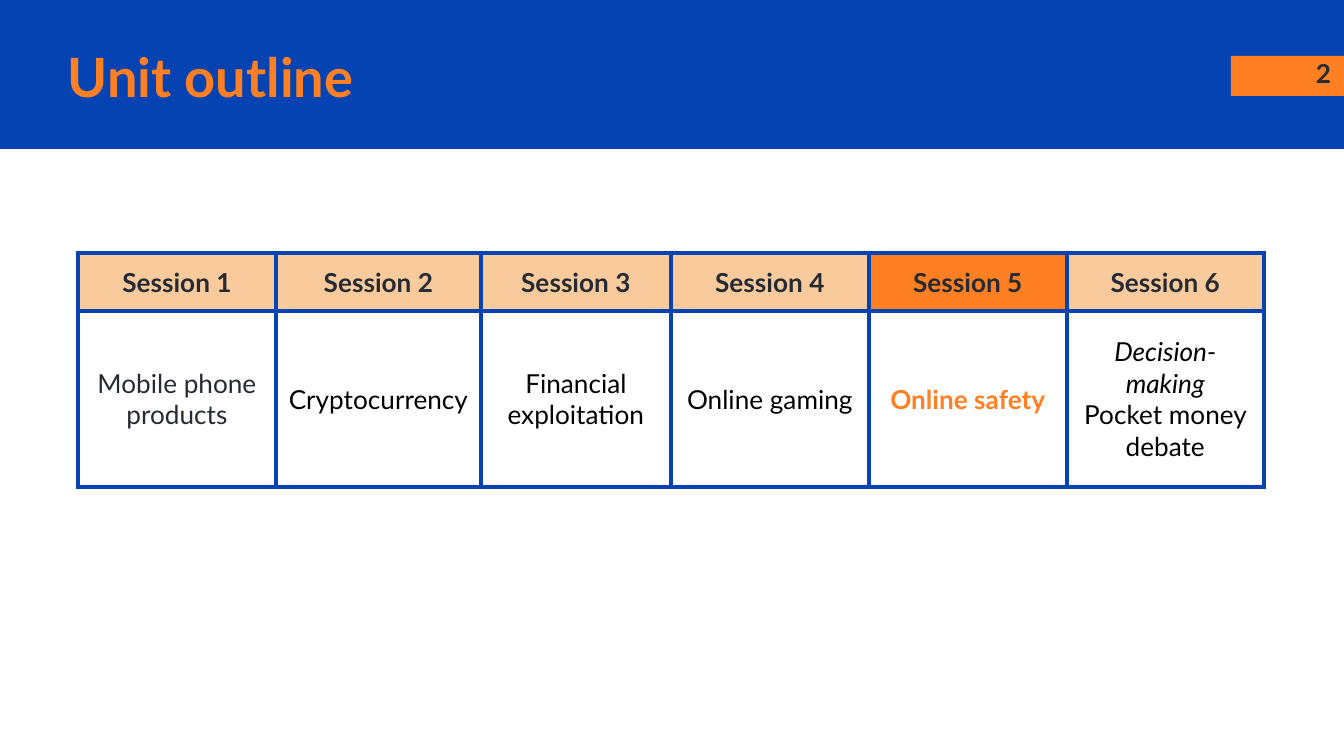
import dataclasses

import pptx
import pptx.dml.color
import pptx.enum.shapes
import pptx.enum.text
import pptx.oxml
import pptx.oxml.ns
import pptx.util

EMU_PER_PX = 914400 / 134.4
BLUE, ORANGE, PEACH = "0543B3", "FF8022", "F9CB9C"
DARK, BLACK = "262A33", "000000"
ALIGN = pptx.enum.text.PP_ALIGN
MIDDLE = pptx.enum.text.MSO_ANCHOR.MIDDLE
TOP = pptx.enum.text.MSO_ANCHOR.TOP
HEADER_INSET, BODY_INSET = 13, 9


@dataclasses.dataclass(frozen=True)
class Box:
    left: int
    top: int
    width: int
    height: int


@dataclasses.dataclass(frozen=True)
class Line:
    text: str
    color: str = BLACK
    bold: bool = False
    italic: bool = False
    size: int = 14


@dataclasses.dataclass(frozen=True)
class Session:
    width: int
    lines: tuple[Line, ...]
    header_fill: str = PEACH


SESSIONS = (
    Session(198, (Line("Mobile phone products", DARK),)),
    Session(205, (Line("Cryptocurrency"),)),
    Session(190, (Line("Financial exploitation"),)),
    Session(198, (Line("Online gaming"),)),
    Session(198, (Line("Online safety", ORANGE, bold=True),), ORANGE),
    Session(197, (Line("Decision-", italic=True), Line("making", italic=True),
                  Line("Pocket money debate"))),
)
ROW_HEIGHTS = (58, 176)


def px(length: int) -> int:
    return round(length * EMU_PER_PX)


def rgb(color: str) -> pptx.dml.color.RGBColor:
    return pptx.dml.color.RGBColor.from_string(color)


def place(box: Box) -> tuple[int, ...]:
    return tuple(px(length) for length in dataclasses.astuple(box))


def set_values(target, values: dict) -> None:
    for name, value in values.items():
        setattr(target, name, value)


def margins(inset: int) -> dict:
    return {f"margin_{side}": px(inset) for side in ("left", "right", "top", "bottom")}


def write_lines(text_frame, lines: tuple[Line, ...], alignment) -> None:
    for index, line in enumerate(lines):
        paragraph = text_frame.add_paragraph() if index else text_frame.paragraphs[0]
        paragraph.alignment = alignment
        run = paragraph.add_run()
        run.text = line.text
        set_values(run.font, {"name": "Lato", "size": pptx.util.Pt(line.size),
                              "bold": line.bold, "italic": line.italic})
        run.font.color.rgb = rgb(line.color)


def add_rectangle(slide, box: Box, color: str) -> None:
    shape = slide.shapes.add_shape(
        pptx.enum.shapes.MSO_SHAPE.RECTANGLE, *place(box))
    shape.shadow.inherit = False
    shape.fill.solid()
    shape.fill.fore_color.rgb = rgb(color)
    shape.line.fill.background()


def add_text(slide, box: Box, line: Line, alignment, anchor) -> None:
    text_frame = slide.shapes.add_textbox(*place(box)).text_frame
    set_values(text_frame, {"word_wrap": True, "vertical_anchor": anchor,
                            **margins(HEADER_INSET)})
    write_lines(text_frame, (line,), alignment)


def add_borders(cell, color: str, points: float) -> None:
    properties = cell._tc.get_or_add_tcPr()
    for index, side in enumerate("LRTB"):
        properties.insert(index, pptx.oxml.parse_xml(
            f'<a:ln{side} {pptx.oxml.ns.nsdecls("a")} w="{pptx.util.Pt(points)}">'
            f'<a:solidFill><a:srgbClr val="{color}"/></a:solidFill></a:ln{side}>'))


def fill_cell(cell, lines: tuple[Line, ...], inset: int, color: str | None = None) -> None:
    set_values(cell, {"vertical_anchor": MIDDLE, **margins(inset)})
    if color:
        cell.fill.solid()
        cell.fill.fore_color.rgb = rgb(color)
    else:
        cell.fill.background()
    add_borders(cell, BLUE, 2.25)
    write_lines(cell.text_frame, lines, ALIGN.CENTER)


def add_outline_table(slide, left: int, top: int) -> None:
    box = Box(left, top, sum(session.width for session in SESSIONS), sum(ROW_HEIGHTS))
    table = slide.shapes.add_table(len(ROW_HEIGHTS), len(SESSIONS), *place(box)).table
    set_values(table, {"first_row": False, "horz_banding": False})
    for row, height in zip(table.rows, ROW_HEIGHTS):
        row.height = px(height)
    for column, session in enumerate(SESSIONS):
        table.columns[column].width = px(session.width)
        heading = Line(f"Session {column + 1}", DARK, bold=True)
        fill_cell(table.cell(0, column), (heading,), HEADER_INSET, session.header_fill)
        fill_cell(table.cell(1, column), session.lines, BODY_INSET)


def main() -> None:
    presentation = pptx.Presentation()
    set_values(presentation, {"slide_width": px(1344), "slide_height": px(756)})
    slide = presentation.slides.add_slide(presentation.slide_layouts[6])
    add_rectangle(slide, Box(0, 0, 1344, 149), BLUE)
    add_rectangle(slide, Box(1231, 56, 113, 40), ORANGE)
    add_text(slide, Box(1263, 44, 81, 58), Line("2", DARK, bold=True), ALIGN.RIGHT, TOP)
    add_text(slide, Box(55, 38, 1137, 75),
             Line("Unit outline", ORANGE, bold=True, size=29), ALIGN.LEFT, MIDDLE)
    add_outline_table(slide, 78, 253)
    presentation.save("out.pptx")


if __name__ == "__main__":
    main()
